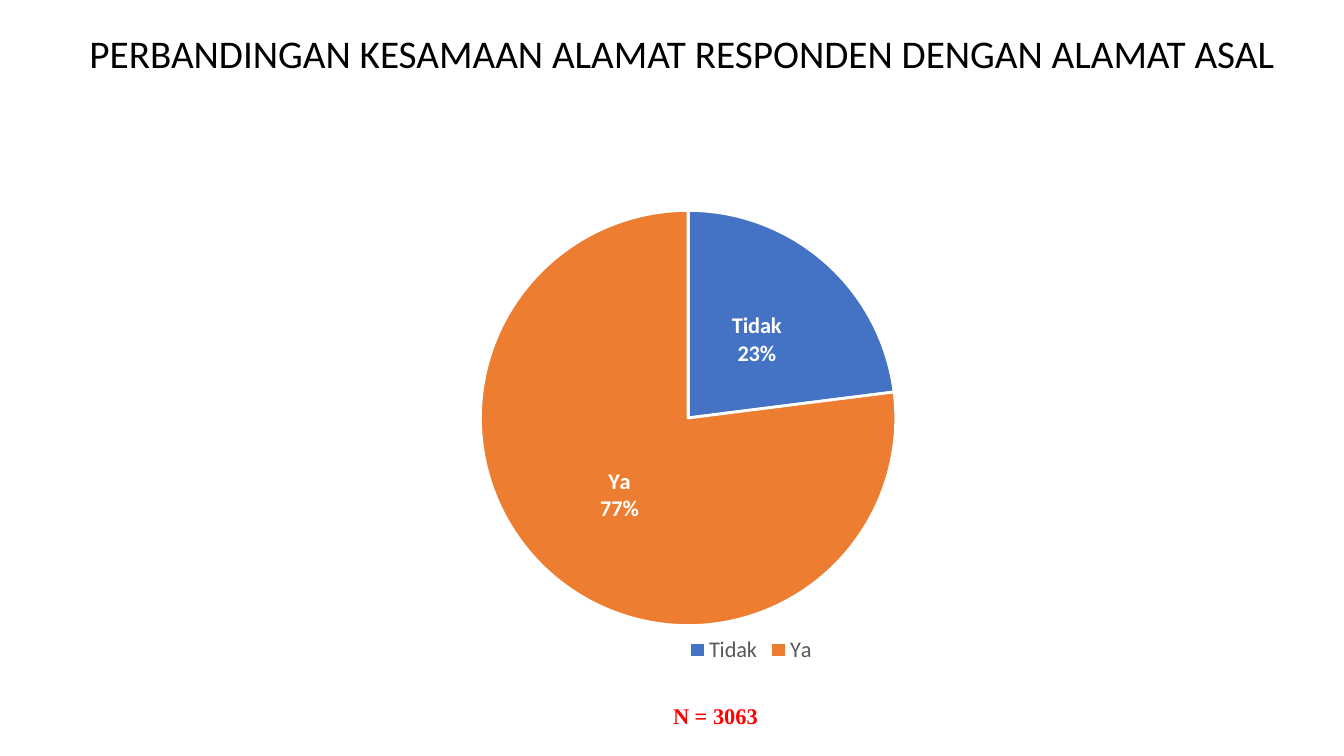
from dataclasses import dataclass

from lxml import etree
from pptx import Presentation
from pptx.chart.data import CategoryChartData
from pptx.dml.color import RGBColor
from pptx.enum.chart import XL_CHART_TYPE, XL_LABEL_POSITION, XL_LEGEND_POSITION
from pptx.enum.text import MSO_ANCHOR, PP_ALIGN
from pptx.oxml.ns import qn
from pptx.util import Inches, Pt

PIE = XL_CHART_TYPE.PIE
LABEL_CENTER = XL_LABEL_POSITION.CENTER
LEGEND_BOTTOM = XL_LEGEND_POSITION.BOTTOM
MIDDLE = MSO_ANCHOR.MIDDLE
CENTER = PP_ALIGN.CENTER

SLIDE_WIDTH = Inches(13.33)
SLIDE_HEIGHT = Inches(7.5)
COLUMN = SLIDE_WIDTH / 100
ROW = SLIDE_HEIGHT / 100


@dataclass(frozen=True)
class Theme:
    sans: str = "Calibri"
    serif: str = "Times New Roman"
    black: str = "000000"
    white: str = "FFFFFF"
    gray: str = "595959"
    red: str = "FF0000"
    slices: tuple = ("4472C4", "ED7D31")
    title_size: int = 28
    body_size: int = 16
    chart_size: int = 10


THEME = Theme()


def grid(column, row, columns, rows):
    return (round(column * COLUMN), round(row * ROW),
            round(columns * COLUMN), round(rows * ROW))


def set_font(font, size, color, name, bold=False):
    font.size = Pt(size)
    font.name = name
    font.bold = bold
    font.color.rgb = RGBColor.from_string(color)


def write_text(frame, text, spacing=1.0, **font_format):
    para = frame.paragraphs[0]
    para.alignment = CENTER
    para.line_spacing = spacing
    span = para.add_run()
    span.text = text
    set_font(span.font, **font_format)


def add_title(page, text, area):
    box = page.shapes.add_textbox(*area)
    box.text_frame.word_wrap = True
    box.text_frame.vertical_anchor = MIDDLE
    write_text(box.text_frame, text, spacing=0.9, size=THEME.title_size,
               color=THEME.black, name=THEME.sans)


def set_plot_layout(chart, **percents):
    plot_area = chart.plots[0]._element.getparent()
    for old in plot_area.findall(qn("c:layout")):
        plot_area.remove(old)
    layout = etree.Element(qn("c:layout"))
    manual = etree.SubElement(layout, qn("c:manualLayout"))
    shares = {tag: percent / 100 for tag, percent in percents.items()}
    settings = {"layoutTarget": "inner", "xMode": "edge", "yMode": "edge", **shares}
    for tag, value in settings.items():
        etree.SubElement(manual, qn(f"c:{tag}")).set("val", str(value))
    plot_area.insert(0, layout)


def add_pie(page, shares, area):
    data = CategoryChartData()
    data.categories = list(shares)
    data.add_series("Series 1", list(shares.values()))
    chart = page.shapes.add_chart(PIE, *area, data).chart
    chart.has_title = False
    set_font(chart.font, THEME.chart_size, THEME.black, THEME.sans)
    set_plot_layout(chart, x=3.3, y=10.8, w=82.4, h=80.9)

    chart.has_legend = True
    chart.legend.position = LEGEND_BOTTOM
    chart.legend.include_in_layout = False
    set_font(chart.legend.font, THEME.body_size, THEME.gray, THEME.sans)

    plot = chart.plots[0]
    plot.vary_by_categories = True
    for index, color in enumerate(THEME.slices):
        slice_format = plot.series[0].points[index].format
        slice_format.fill.solid()
        slice_format.fill.fore_color.rgb = RGBColor.from_string(color)
        slice_format.line.color.rgb = RGBColor.from_string(THEME.white)
        slice_format.line.width = Pt(2)

    labels = plot.series[0].data_labels
    labels.show_value = False
    labels.show_category_name = True
    labels.show_percentage = True
    labels.number_format = "0%"
    labels.number_format_is_linked = False
    labels.position = LABEL_CENTER
    set_font(labels.font, THEME.body_size, THEME.white, THEME.sans, bold=True)
    separator = etree.Element(qn("c:separator"))
    separator.text = "\n"
    labels._element.find(qn("c:showBubbleSize")).addnext(separator)


def add_sample_table(page, text, area):
    table = page.shapes.add_table(1, 1, *area).table
    table.first_row = False
    table.horz_banding = False
    cell = table.cell(0, 0)
    cell.fill.background()
    write_text(cell.text_frame, text, size=THEME.body_size, color=THEME.red,
               name=THEME.serif, bold=True)


def main():
    deck = Presentation()
    deck.slide_width = SLIDE_WIDTH
    deck.slide_height = SLIDE_HEIGHT
    page = deck.slides.add_slide(deck.slide_layouts[6])
    add_title(page, "PERBANDINGAN KESAMAAN ALAMAT RESPONDEN DENGAN ALAMAT ASAL",
              grid(4.13, 1.33, 93.17, 12))
    add_pie(page, {"Tidak": 23, "Ya": 77}, grid(13.28, 20.5, 85.22, 67.9))
    add_sample_table(page, "N = 3063", grid(48.24, 92.53, 9.98, 4.4))
    deck.save("out.pptx")


if __name__ == "__main__":
    main()
